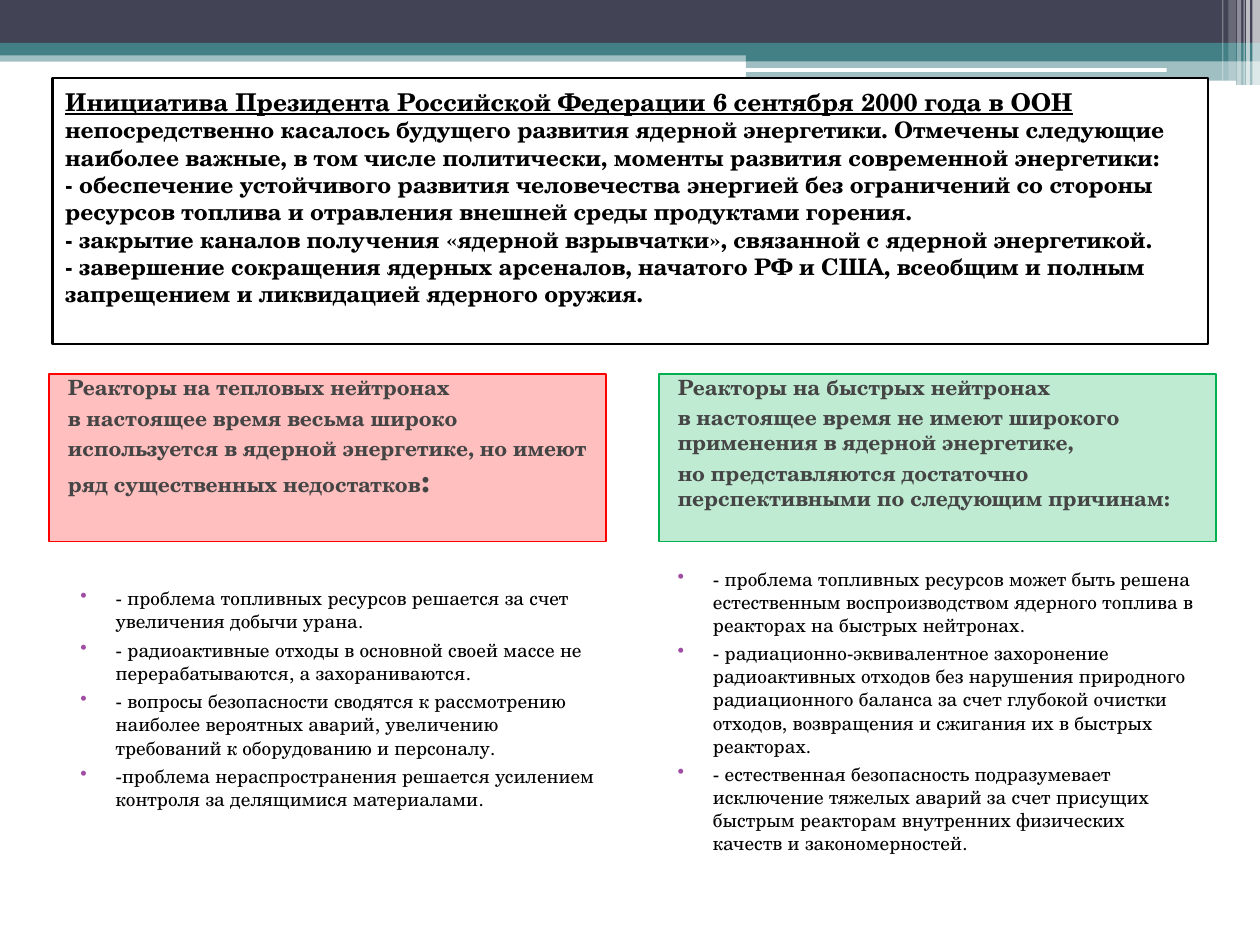
from lxml import etree
from pptx import Presentation
from pptx import util as u
from pptx.dml.color import RGBColor
from pptx.enum import shapes, text
from pptx.oxml import ns

FONT = "TeX Gyre Schola"
COLUMN_WIDTH = 318.2

BARS = [
    (0, 28.8, 720, 6.5, "438086", 50),
    (0, 0, 720, 24.5, "424456", 100),
    (0, 24.5, 720, 7.2, "438086", 100),
    (426.2, 28.1, 293.8, 6.8, "438086", 100),
    (426.2, 34.6, 293.8, 14, "438086", 50),
]
PILLS = [(425.5, 38.9, 241.2, 2.2), (580.3, 46.1, 126, 2.6)]
STRIPES = [
    (715.7, 4.3, 49, 65),
    (712.1, 2.2, 49, 65),
    (710.6, 0.7, 49, 60),
    (707, 2.2, 49, 40),
    (702, 4.3, 46.1, 20),
    (698.4, 0.7, 46.1, 30),
]

INITIATIVE = [
    [("Инициатива Президента Российской Федерации 6 сентября 2000 года в ООН ", 14, True),
     ("непосредственно касалось будущего развития ядерной энергетики. Отмечены следующие "
      "наиболее важные, в том числе политически, моменты развития современной энергетики:", 13, False)],
    [("- обеспечение устойчивого развития человечества энергией без ограничений со стороны "
      "ресурсов топлива и отравления внешней среды продуктами горения.", 13, False)],
    [("- закрытие каналов получения «ядерной взрывчатки», связанной с ядерной энергетикой.", 13, False)],
    [("- завершение сокращения ядерных арсеналов, начатого РФ и США, всеобщим и полным "
      "запрещением и ликвидацией ядерного оружия.", 13, False)],
]
THERMAL_HEADING = [
    [("Реакторы на тепловых нейтронах", 12, False)],
    [("в настоящее время весьма широко", 12, False)],
    [("используется в ядерной энергетике, но имеют ряд существенных недостатков", 12, False),
     (":", 18, False)],
]
FAST_HEADING = [
    [("Реакторы на быстрых нейтронах", 12, False)],
    [("в настоящее время не имеют широкого применения в ядерной энергетике,", 12, False)],
    [("но представляются достаточно перспективными по следующим причинам:", 12, False)],
]
THERMAL_POINTS = [
    "- проблема топливных ресурсов решается за счет увеличения добычи урана.",
    "- радиоактивные отходы в основной своей массе не перерабатываются, а захораниваются.",
    "- вопросы безопасности сводятся к рассмотрению наиболее вероятных аварий, увеличению "
    "требований к оборудованию и персоналу.",
    "-проблема нераспространения решается усилением контроля за делящимися материалами.",
]
FAST_POINTS = [
    "- проблема топливных ресурсов может быть решена естественным воспроизводством ядерного "
    "топлива в реакторах на быстрых нейтронах.",
    "- радиационно-эквивалентное захоронение радиоактивных отходов без нарушения природного "
    "радиационного баланса за счет глубокой очистки отходов, возвращения и сжигания их в быстрых реакторах.",
    "- естественная безопасность подразумевает исключение тяжелых аварий за счет присущих "
    "быстрым реакторам внутренних физических качеств и закономерностей.",
]


def color(value):
    return RGBColor.from_string(value)


def add_block(slide, box, fill, opacity=100, line=None, line_width=1, kind="RECTANGLE"):
    shape = slide.shapes.add_shape(getattr(shapes.MSO_SHAPE, kind), *map(u.Pt, box))
    shape.shadow.inherit = False
    shape.fill.solid()
    shape.fill.fore_color.rgb = color(fill)
    if opacity < 100:
        tint = shape.fill._xPr.find(".//" + ns.qn("a:srgbClr"))
        etree.SubElement(tint, ns.qn("a:alpha"), val=str(opacity * 1000))
    if line:
        shape.line.color.rgb = color(line)
        shape.line.width = u.Pt(line_width)
    else:
        shape.line.fill.background()
    return shape


def add_run(paragraph, wording, size, ink, bold=False, underline=False):
    run = paragraph.add_run()
    run.text = wording
    run.font.name = FONT
    run.font.size = u.Pt(size)
    run.font.bold = bold
    run.font.underline = underline
    run.font.color.rgb = color(ink)


def set_indent(paragraph, left, first=0, bullet=None):
    properties = paragraph._p.get_or_add_pPr()
    properties.set("marL", str(u.Pt(left)))
    properties.set("indent", str(u.Pt(first)))
    if bullet:
        bullet_color = etree.SubElement(properties, ns.qn("a:buClr"))
        etree.SubElement(bullet_color, ns.qn("a:srgbClr"), val=bullet)
        etree.SubElement(properties, ns.qn("a:buChar"), char="•")


def prepare_frame(shape, top_inset):
    frame = shape.text_frame
    frame.word_wrap = True
    frame.vertical_anchor = text.MSO_ANCHOR.TOP
    frame.margin_top = u.Pt(top_inset)
    frame.margin_bottom = 0
    return frame


def add_paragraphs(frame, count, gap):
    for index in range(count):
        paragraph = frame.paragraphs[0] if index == 0 else frame.add_paragraph()
        paragraph.alignment = text.PP_ALIGN.LEFT
        paragraph.space_before = u.Pt(gap if index else 0)
        yield paragraph


def fill_panel(shape, content, ink, top_inset, left=0, gap=0):
    frame = prepare_frame(shape, top_inset)
    for paragraph, runs in zip(add_paragraphs(frame, len(content), gap), content):
        set_indent(paragraph, left)
        for wording, size, underline in runs:
            add_run(paragraph, wording, size, ink, True, underline)


def add_bullets(slide, box, points, top_inset):
    shape = slide.shapes.add_textbox(*map(u.Pt, box))
    frame = prepare_frame(shape, top_inset)
    for paragraph, point in zip(add_paragraphs(frame, len(points), 3), points):
        set_indent(paragraph, 28.8, -20.16, "A04DA3")
        add_run(paragraph, point, 11, "000000")


def add_header(slide):
    for *box, fill, opacity in BARS:
        add_block(slide, box, fill, opacity)
    for box in PILLS:
        add_block(slide, box, "FFFFFF", kind="ROUNDED_RECTANGLE")
    for left, width, height, opacity in STRIPES:
        add_block(slide, (left, 0, width, height), "FFFFFF", opacity)


def main():
    presentation = Presentation()
    presentation.slide_width, presentation.slide_height = u.Pt(720), u.Pt(540)
    slide = presentation.slides.add_slide(presentation.slide_layouts[6])
    add_header(slide)
    initiative = add_block(slide, (30.2, 44.6, 660.2, 152), "FFFFFF", line="000000", line_width=1.5)
    fill_panel(initiative, INITIATIVE, "000000", 5)
    for left, accent, heading, inset in (
        (28.1, "FF0000", THERMAL_HEADING, 0.4),
        (376.6, "00B050", FAST_HEADING, 0),
    ):
        panel = add_block(slide, (left, 213.8, COLUMN_WIDTH, 95.6), accent, 25, accent)
        fill_panel(panel, heading, "454545", inset, 3.6, 3)
    add_bullets(slide, (30.2, 315.4, COLUMN_WIDTH, 204.5), THERMAL_POINTS, 19.8)
    add_bullets(slide, (371.5, 320.4, COLUMN_WIDTH, 198.7), FAST_POINTS, 3.6)
    presentation.save("out.pptx")


if __name__ == "__main__":
    main()
